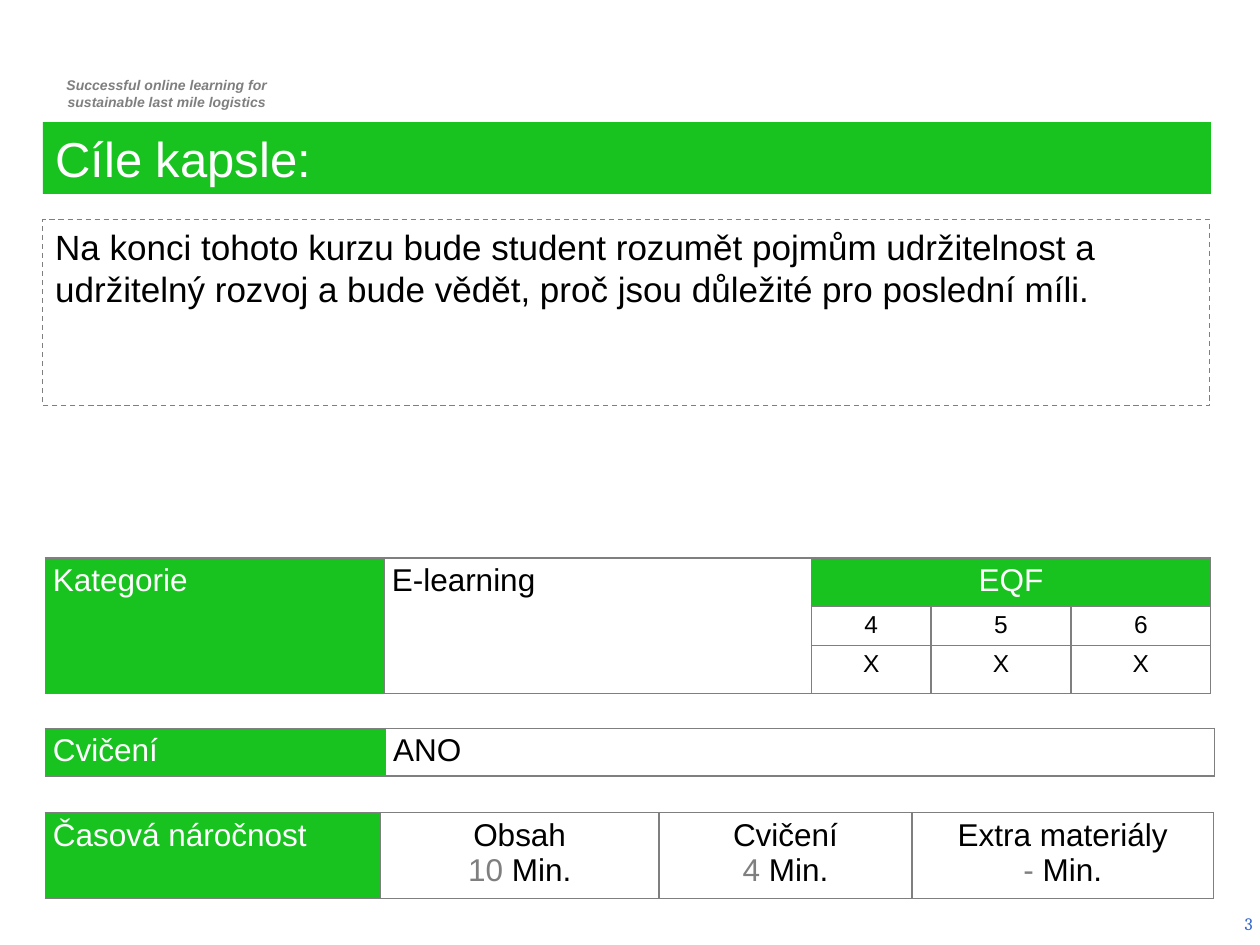
from lxml import etree
from pptx import Presentation
from pptx import util as u
from pptx.dml.color import RGBColor
from pptx.enum import dml, shapes, text
from pptx.oxml.ns import qn

COLORS = {"green": "18C320", "grey": "7F7F7F", "white": "FFFFFF",
          "black": "000000", "blue": "3366CC"}
ALIGN = text.PP_ALIGN


def rgb(name):
    return RGBColor.from_string(COLORS[name])


def write(frame, lines, size=18, color="black", align=ALIGN.LEFT, font="Arial",
          bold=False, italic=False):
    """Fill a text frame; each line is a string or a list of (text, color) spans."""
    frame.word_wrap = True
    for i, line in enumerate(lines):
        para = frame.paragraphs[0] if i == 0 else frame.add_paragraph()
        para.alignment = align
        for content, shade in [(line, color)] if isinstance(line, str) else line:
            span = para.add_run()
            span.text = content
            span.font.name = font
            span.font.size = u.Pt(size)
            span.font.bold = bold
            span.font.italic = italic
            span.font.color.rgb = rgb(shade)


deck = Presentation()
deck.slide_width, deck.slide_height = u.Inches(10), u.Inches(7.5)
page = deck.slides.add_slide(deck.slide_layouts[6])

# Project motto and page number
motto = page.shapes.add_textbox(u.Inches(0.29), u.Inches(0.56), u.Inches(2.03), u.Inches(0.37))
write(motto.text_frame,
      ["Successful online learning for", "sustainable last mile logistics"],
      size=8, color="grey", align=ALIGN.CENTER, bold=True, italic=True)
for para in motto.text_frame.paragraphs:
    para._p.get_or_add_pPr().set("marL", str(u.Inches(0.04)))

number = page.shapes.add_textbox(u.Inches(7.71), u.Inches(7.13), u.Inches(2.33), u.Inches(0.4))
number.text_frame.vertical_anchor = text.MSO_ANCHOR.MIDDLE
write(number.text_frame, ["3"], size=10, color="blue", align=ALIGN.RIGHT, font="Cambria")

# Title bar and goal
title = page.shapes.add_shape(shapes.MSO_SHAPE.RECTANGLE, u.Inches(0.34), u.Inches(0.97),
                              u.Inches(9.27), u.Inches(0.57))
title.fill.solid()
title.fill.fore_color.rgb = rgb("green")
title.line.fill.background()
write(title.text_frame, ["Cíle kapsle:"], size=28, color="white")

goal = page.shapes.add_shape(shapes.MSO_SHAPE.RECTANGLE, u.Inches(0.34), u.Inches(1.74),
                             u.Inches(9.26), u.Inches(1.48))
goal.fill.background()
goal.line.color.rgb = rgb("grey")
goal.line.width = u.Pt(0.75)
goal.line.dash_style = dml.MSO_LINE.DASH
write(goal.text_frame,
      ["Na konci tohoto kurzu bude student rozumět pojmům udržitelnost a udržitelný "
       "rozvoj a bude vědět, proč jsou důležité pro poslední míli."], size=20)

for box in (title, goal):
    box.shadow.inherit = False
    box.text_frame.vertical_anchor = text.MSO_ANCHOR.TOP

# Tables: top, column widths, row heights, merged ranges, cells by (row, column)
label = {"color": "white", "align": ALIGN.JUSTIFY}
value = {"align": ALIGN.JUSTIFY}
centered = {"align": ALIGN.CENTER}
level = {"size": 14, "align": ALIGN.CENTER}

category_cells = {(0, 0): (["Kategorie"], label),
                  (0, 1): (["E-learning"], value),
                  (0, 2): (["EQF"], {"color": "white", "align": ALIGN.CENTER})}
for col, eqf in enumerate("456", start=2):
    category_cells[1, col] = ([eqf], level)
    category_cells[2, col] = (["X"], level)

time_cells = {(0, 0): (["Časová náročnost"], label)}
for col, (part, minutes) in enumerate(
        [("Obsah", "10 "), ("Cvičení", "4 "), ("Extra materiály", "- ")], start=1):
    time_cells[0, col] = ([part, [(minutes, "grey"), ("Min.", "black")]], centered)

tables = [
    (4.43, [2.69, 3.39, 0.95, 1.11, 1.11], [0.37, 0.31, 0.37],
     [((0, 0), (2, 0)), ((0, 1), (2, 1)), ((0, 2), (0, 4))], category_cells),
    (5.78, [2.7, 6.58], [0.37], [],
     {(0, 0): (["Cvičení"], label), (0, 1): (["ANO"], value)}),
    (6.45, [2.66, 2.21, 2.01, 2.39], [0.67], [], time_cells),
]

for top, widths, heights, merges, cells in tables:
    table = page.shapes.add_table(len(heights), len(widths), u.Inches(0.36), u.Inches(top),
                                  u.Inches(sum(widths)), u.Inches(sum(heights))).table
    table.first_row = table.horz_banding = False
    for column, width in zip(table.columns, widths):
        column.width = u.Inches(width)
    for row, height in zip(table.rows, heights):
        row.height = u.Inches(height)
    for first, last in merges:
        table.cell(*first).merge(table.cell(*last))

    for cell in table.iter_cells():
        cell.margin_left = cell.margin_right = u.Inches(0.06)
        cell.margin_top = cell.margin_bottom = u.Inches(0.04)
        props = cell._tc.get_or_add_tcPr()
        for side in ("a:lnL", "a:lnR", "a:lnT", "a:lnB"):
            border = etree.SubElement(props, qn(side), w=str(u.Pt(1)))
            fill = etree.SubElement(border, qn("a:solidFill"))
            etree.SubElement(fill, qn("a:srgbClr"), val=COLORS["grey"])
        cell.fill.background()

    for position, (lines, style) in cells.items():
        cell = table.cell(*position)
        write(cell.text_frame, lines, **style)
        if style.get("color") == "white":
            cell.fill.solid()
            cell.fill.fore_color.rgb = rgb("green")

deck.save("out.pptx")
